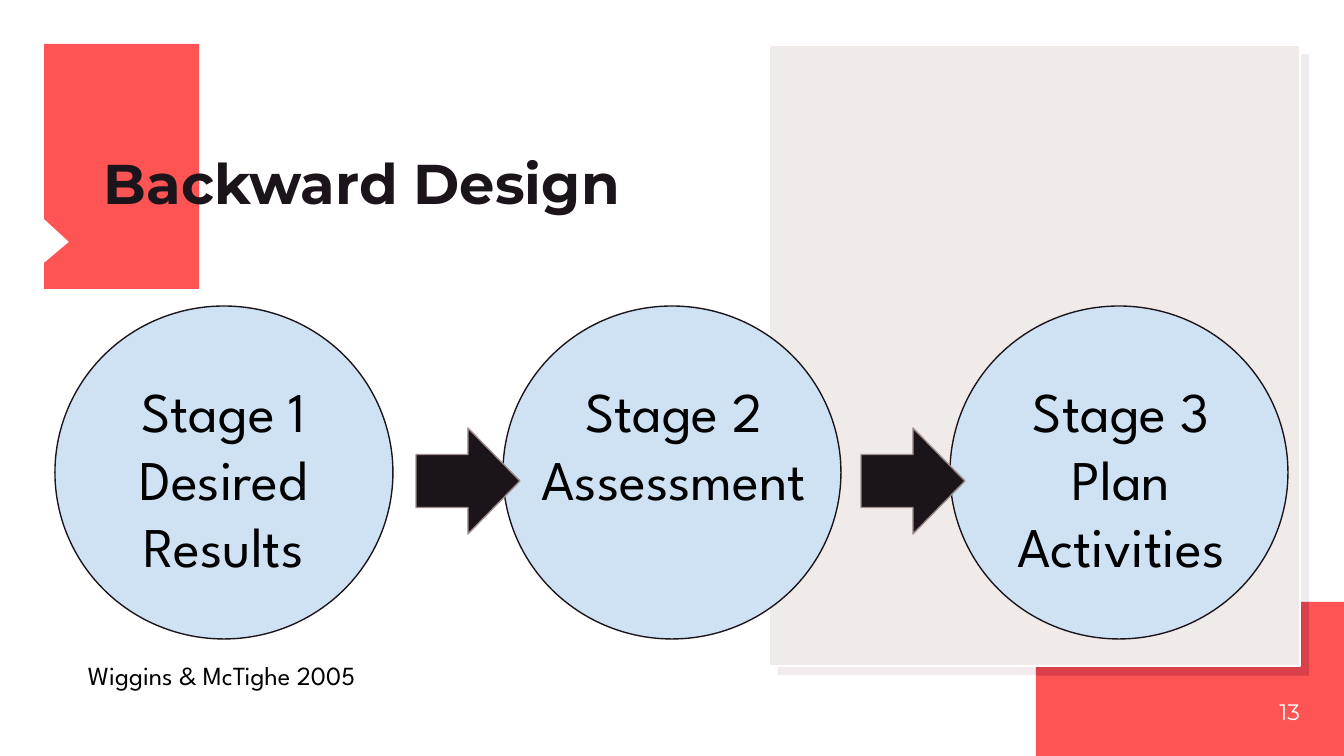
from lxml import etree
from pptx import Presentation
from pptx.dml.color import RGBColor
from pptx.enum.shapes import MSO_SHAPE
from pptx.enum.text import MSO_ANCHOR, PP_ALIGN
from pptx.oxml.ns import qn
from pptx.util import Pt

RECT, OVAL, ARROW = MSO_SHAPE.RECTANGLE, MSO_SHAPE.OVAL, MSO_SHAPE.RIGHT_ARROW
LEFT, CENTER, RIGHT = PP_ALIGN.LEFT, PP_ALIGN.CENTER, PP_ALIGN.RIGHT
TOP, MIDDLE, BOTTOM = MSO_ANCHOR.TOP, MSO_ANCHOR.MIDDLE, MSO_ANCHOR.BOTTOM

EMU_PER_PX = 914400 / 134.4
HEADING_FONT, BODY_FONT = "Montserrat", "League Spartan"
CORAL, INK, BLACK, WHITE = "FF5454", "1B151B", "000000", "FFFFFF"
SKY, SAND, TAUPE, WINE = "CFE2F3", "F0EBE9", "9E8D8B", "5C002D"

RIBBON = [(44, 44), (199, 44), (199, 289), (44, 289), (44, 263), (69, 242), (44, 219)]
PANELS = [
    ((1036, 602, 308, 154), CORAL, None, 100),
    ((778, 54, 531, 621), WINE, None, 8),
    ((1036, 602, 273, 74), WINE, None, 16),
    ((769, 45, 531, 621), SAND, WHITE, 100),
]
STAGES = [
    (["Stage 1", "Desired Results"], 55, 114, 219, 231),
    (["Stage 2", "Assessment"], 503, 508, 332, 163),
    (["Stage 3", "Plan", "Activities"], 950, 986, 270, 231),
]
CIRCLE_TOP, CIRCLE_WIDTH, CIRCLE_HEIGHT, STAGE_TEXT_TOP = 306, 338, 333, 364
ARROW_LEFTS, ARROW_TOP, ARROW_WIDTH, ARROW_HEIGHT = (416, 861), 428, 104, 106


def px(length):
    """Turn pixels into EMU."""
    return round(length * EMU_PER_PX)


def rgb(color):
    """Turn a hex string into a colour."""
    return RGBColor.from_string(color)


def paint(shape, fill, line=None, opacity=100):
    """Give a shape its fill, outline and opacity."""
    shape.shadow.inherit = False
    shape.fill.solid()
    shape.fill.fore_color.rgb = rgb(fill)
    if opacity < 100:
        tint = shape.fill._xPr.find(qn("a:solidFill"))[0]
        etree.SubElement(tint, qn("a:alpha")).set("val", str(opacity * 1000))
    if line:
        shape.line.color.rgb = rgb(line)
        shape.line.width = Pt(0.75)
    else:
        shape.line.fill.background()


def add_preset(slide, preset, box, fill, line=None, opacity=100):
    """Add a painted preset shape."""
    paint(slide.shapes.add_shape(preset, *map(px, box)), fill, line, opacity)


def add_words(slide, lines, box, size, font, color, align=LEFT, anchor=TOP,
              inset=0, bold=False, spacing=1.0):
    """Add a wrapped text box with one paragraph per line."""
    frame = slide.shapes.add_textbox(*map(px, box)).text_frame
    frame.word_wrap = True
    frame.vertical_anchor = anchor
    frame.margin_left = frame.margin_right = px(inset)
    frame.margin_top = frame.margin_bottom = px(inset)
    frame.text = "\n".join(lines)
    for paragraph in frame.paragraphs:
        paragraph.alignment = align
        paragraph.line_spacing = spacing
        paragraph.font.size = Pt(size)
        paragraph.font.name = font
        paragraph.font.bold = bold
        paragraph.font.color.rgb = rgb(color)


def main():
    """Build the backward design slide."""
    deck = Presentation()
    deck.slide_width, deck.slide_height = px(1344), px(756)
    slide = deck.slides.add_slide(deck.slide_layouts[6])

    outline = slide.shapes.build_freeform(*RIBBON[0], scale=EMU_PER_PX)
    outline.add_line_segments(RIBBON[1:], close=True)
    paint(outline.convert_to_shape(), CORAL)
    for box, fill, line, opacity in PANELS:
        add_preset(slide, RECT, box, fill, line, opacity)

    add_words(slide, ["Backward Design"], (104, 157, 575, 58), 30, HEADING_FONT, INK,
              anchor=BOTTOM, bold=True, spacing=0.8)
    add_words(slide, ["13"], (1210, 667, 90, 90), 12, HEADING_FONT, WHITE, RIGHT, MIDDLE)

    for lines, circle_left, text_left, text_width, text_height in STAGES:
        add_preset(slide, OVAL, (circle_left, CIRCLE_TOP, CIRCLE_WIDTH, CIRCLE_HEIGHT),
                   SKY, INK)
        add_words(slide, lines, (text_left, STAGE_TEXT_TOP, text_width, text_height),
                  30, BODY_FONT, BLACK, CENTER, inset=13)
    for left in ARROW_LEFTS:
        add_preset(slide, ARROW, (left, ARROW_TOP, ARROW_WIDTH, ARROW_HEIGHT), INK, TAUPE)

    add_words(slide, ["Wiggins & McTighe 2005"], (75, 646, 755, 59), 14, BODY_FONT, BLACK,
              inset=13)
    deck.save("out.pptx")


if __name__ == "__main__":
    main()
